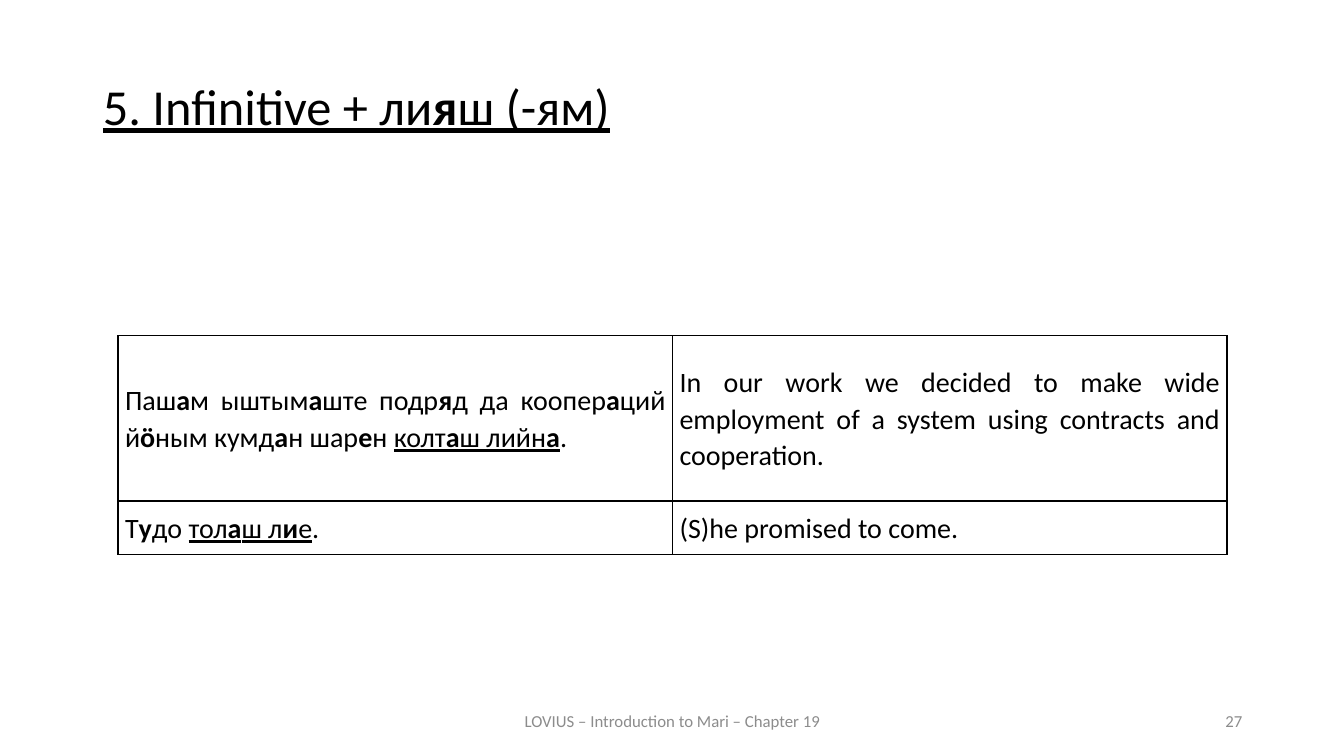
from dataclasses import dataclass

from lxml.etree import SubElement
from pptx import Presentation
from pptx.dml.color import RGBColor
from pptx.enum.text import MSO_ANCHOR, MSO_AUTO_SIZE, PP_ALIGN
from pptx.oxml.ns import qn
from pptx.util import Inches, Pt


@dataclass(frozen=True)
class Theme:
    """Colours, type sizes and font of the slide."""
    font: str = "Calibri"
    ink: str = "000000"
    gray: str = "8C8C8C"
    head: int = 36
    body: int = 20
    foot: int = 12
    rule: float = 1


class Deck:
    """Draws styled elements on the current slide."""

    def __init__(self, theme):
        self.theme = theme
        self.prs = Presentation()
        self.prs.slide_width, self.prs.slide_height = Inches(13.33), Inches(7.5)
        self.slide = self.prs.slides.add_slide(self.prs.slide_layouts[5])

    def add_runs(self, para, text, size, color, align):
        """Add runs, where *stars* mark bold and _bars_ mark underline."""
        para.alignment = align
        for i, part in enumerate(text.split("_")):
            for j, piece in enumerate(part.split("*")):
                if piece:
                    run = para.add_run()
                    run.text = piece
                    font = run.font
                    font.name, font.size = self.theme.font, Pt(size)
                    font.bold, font.underline = j % 2 == 1, i % 2 == 1
                    font.color.rgb = RGBColor.from_string(color)

    def title(self, text, left, top, width, height):
        """Place and fill the title."""
        shape = self.slide.shapes.title
        shape.left, shape.top = Inches(left), Inches(top)
        shape.width, shape.height = Inches(width), Inches(height)
        frame = shape.text_frame
        frame.word_wrap, frame.auto_size = True, MSO_AUTO_SIZE.NONE
        frame.vertical_anchor = MSO_ANCHOR.TOP
        para = frame.paragraphs[0]
        para.line_spacing, para.space_before = 0.9, Pt(12)
        self.add_runs(para, text, self.theme.head, self.theme.ink, PP_ALIGN.JUSTIFY)

    def footer(self, text, left, width, align):
        """Add a small gray text at the foot of the slide."""
        box = self.slide.shapes.add_textbox(
            Inches(left), Inches(6.95), Inches(width), Inches(0.4))
        frame = box.text_frame
        frame.word_wrap, frame.vertical_anchor = True, MSO_ANCHOR.MIDDLE
        self.add_runs(frame.paragraphs[0], text, self.theme.foot, self.theme.gray,
                      align)

    def border(self, cell):
        """Rule all four sides of a cell."""
        props = cell._tc.get_or_add_tcPr()
        for side in ("lnL", "lnR", "lnT", "lnB"):
            line = SubElement(props, qn(f"a:{side}"), w=str(Pt(self.theme.rule)))
            fill = SubElement(line, qn("a:solidFill"))
            SubElement(fill, qn("a:srgbClr"), val=self.theme.ink)

    def table(self, rows, left, top, widths, heights):
        """Add a ruled table of justified text."""
        table = self.slide.shapes.add_table(
            len(rows), len(widths), Inches(left), Inches(top),
            Inches(sum(widths)), Inches(sum(heights))).table
        table.first_row = table.horz_banding = False
        for col, width in zip(table.columns, widths):
            col.width = Inches(width)
        for row, height, texts in zip(table.rows, heights, rows):
            row.height = Inches(height)
            for cell, text in zip(row.cells, texts):
                self.border(cell)
                cell.fill.background()
                cell.vertical_anchor = MSO_ANCHOR.MIDDLE
                cell.margin_left = cell.margin_right = Inches(0.07)
                cell.margin_top = cell.margin_bottom = 0
                para = cell.text_frame.paragraphs[0]
                para.line_spacing = 1.07
                self.add_runs(para, text, self.theme.body, self.theme.ink,
                              PP_ALIGN.JUSTIFY)


ROWS = [
    ("Паш*а*м ыштым*а*ште подр*я*д да коопер*а*ций й*ӧ*ным кумд*а*н "
     "шар*е*н _колт*а*ш лийн*а*_.",
     "In our work we decided to make wide employment of a system using "
     "contracts and cooperation."),
    ("Т*у*до _тол*а*ш л*и*е_.", "(S)he promised to come."),
]


def main():
    """Build and save the slide."""
    deck = Deck(Theme())
    deck.title("_5. Infinitive + ли*я*ш (-ям)_", 0.92, 0.76, 11.5, 0.83)
    deck.table(ROWS, 1.17, 3.33, (5.5, 5.5), (1.64, 0.53))
    deck.footer("LOVIUS – Introduction to Mari – Chapter 19", 4.42, 4.5,
                PP_ALIGN.CENTER)
    deck.footer("27", 9.42, 3, PP_ALIGN.RIGHT)
    deck.prs.save("out.pptx")


if __name__ == "__main__":
    main()
